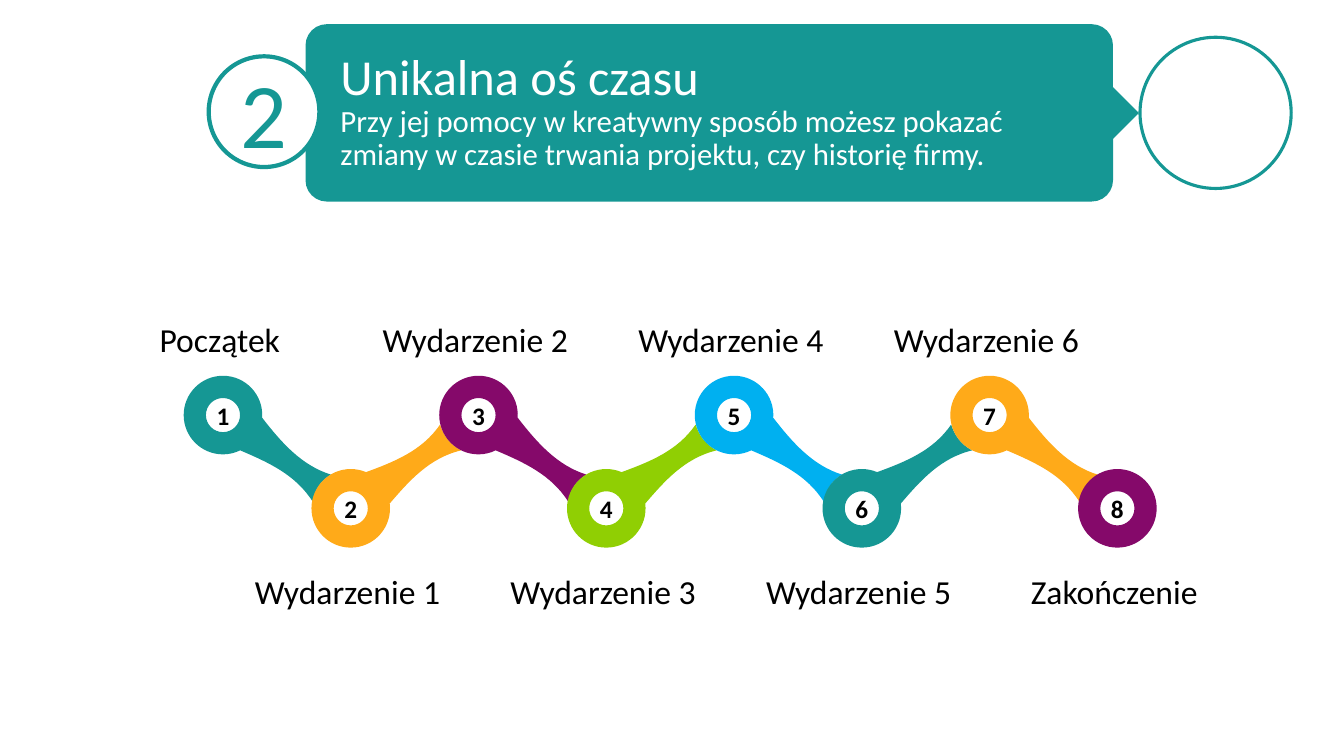
from dataclasses import dataclass
from math import cos, radians, sin, tan

from lxml.etree import SubElement
from pptx import Presentation
from pptx.dml.color import RGBColor
from pptx.enum.shapes import MSO_SHAPE
from pptx.enum.text import MSO_ANCHOR, PP_ALIGN
from pptx.oxml.ns import qn
from pptx.util import Cm, Pt


@dataclass(frozen=True)
class Theme:
    font: str = "Calibri"
    teal: str = "159794"
    orange: str = "FFAA19"
    purple: str = "85096A"
    green: str = "90CF03"
    blue: str = "00B0F0"
    white: str = "FFFFFF"
    black: str = "000000"
    badge_size: int = 66
    title_size: int = 36
    lead_size: int = 22
    label_size: int = 24
    number_size: int = 18


THEME = Theme()

# Timeline geometry in centimetres
FIRST_X, STEP = 5.62, 3.22
UPPER_Y, LOWER_Y = 10.46, 12.81
RING, HOLE = 0.99, 0.43
LABEL_WIDTH, LABEL_HEIGHT = 6.22, 1.27
UPPER_LABEL_Y, LOWER_LABEL_Y = 7.9, 14.25

# Arms: stops of the ring's arc in degrees, then Bezier curves around its centre
FULL_CIRCLE = (0, -90, -180, -270, -360)
DOWN_ARM = ((4, -90, -180, -270, -296), [
    [(1.14, 1.19), (1.83, 1.5), (2.26, 2.18)],
    [(2.31, 1.9), (2.46, 1.65), (2.72, 1.5)],
    [(1.98, 1.27), (1.47, 0.69), (0.99, 0.07)],
])
UP_ARM = ((-67, -90, -180, -270, -367), [
    [(1.47, -0.69), (1.98, -1.27), (2.78, -1.46)],
    [(2.51, -1.6), (2.34, -1.83), (2.25, -2.11)],
    [(1.8, -1.45), (1.09, -1.17), (0.38, -0.91)],
])
NO_ARM = (FULL_CIRCLE, [])


def arc(radius, stops):
    """Return the start point and one Bezier curve for each pair of stops."""
    angles = [radians(stop) for stop in stops]
    points = [(radius * cos(a), radius * sin(a)) for a in angles]
    curves = []
    for i, (start, end) in enumerate(zip(angles, angles[1:])):
        pull = 4 / 3 * tan((end - start) / 4)
        (x0, y0), (x1, y1) = points[i:i + 2]
        curves.append([(x0 - pull * y0, y0 + pull * x0),
                       (x1 + pull * y1, y1 - pull * x1), (x1, y1)])
    return points[0], curves


class SlideBuilder:
    def __init__(self, slide, theme):
        self.slide = slide
        self.theme = theme

    def paint(self, shape, fill, line=None, line_width=0):
        shape.shadow.inherit = False
        shape.fill.solid()
        shape.fill.fore_color.rgb = RGBColor.from_string(fill)
        if line:
            shape.line.color.rgb = RGBColor.from_string(line)
            shape.line.width = Pt(line_width)
        else:
            shape.line.fill.background()

    def shape(self, kind, left, top, width, height, fill, line=None, line_width=0):
        shape = self.slide.shapes.add_shape(
            kind, Cm(left), Cm(top), Cm(width), Cm(height))
        self.paint(shape, fill, line, line_width)
        return shape

    def run(self, paragraph, text, size, color, bold=False):
        run = paragraph.add_run()
        run.text = text
        run.font.name = self.theme.font
        run.font.size = Pt(size)
        run.font.bold = bold
        run.font.color.rgb = RGBColor.from_string(color)

    def text_box(self, left, top, width, height, align=PP_ALIGN.CENTER, inset=None):
        box = self.slide.shapes.add_textbox(Cm(left), Cm(top), Cm(width), Cm(height))
        frame = box.text_frame
        frame.word_wrap = True
        frame.vertical_anchor = MSO_ANCHOR.MIDDLE
        if inset is not None:
            frame.margin_left = frame.margin_right = Cm(inset)
            frame.margin_top = frame.margin_bottom = Cm(inset)
        paragraph = frame.paragraphs[0]
        paragraph.alignment = align
        return paragraph

    def node(self, x, y, arm, color):
        def place(point):
            return Cm(x + point[0]), Cm(y + point[1])

        stops, arm_curves = arm
        ring_start, ring_curves = arc(RING, stops)
        hole_start, hole_curves = arc(HOLE, FULL_CIRCLE)
        outline = ring_curves + arm_curves
        builder = self.slide.shapes.build_freeform(*place(ring_start))
        builder.add_line_segments([place(curve[-1]) for curve in outline], close=True)
        builder.move_to(*place(hole_start))
        builder.add_line_segments([place(curve[-1]) for curve in hole_curves], close=True)
        shape = builder.convert_to_shape()
        self.paint(shape, color)
        # Turn each straight segment into its Bezier curve
        segments = list(shape._element.iter(qn("a:lnTo")))
        for segment, curve in zip(segments, outline + hole_curves):
            segment.tag = qn("a:cubicBezTo")
            for old_point in list(segment):
                segment.remove(old_point)
            for px, py in map(place, curve):
                SubElement(segment, qn("a:pt"),
                           x=str(px - shape.left), y=str(py - shape.top))

    def number(self, x, y, text):
        paragraph = self.text_box(x - 0.4, y - 0.5, 0.8, 1, inset=0)
        self.run(paragraph, text, self.theme.number_size, self.theme.black, bold=True)

    def label(self, x, top, text):
        paragraph = self.text_box(x - LABEL_WIDTH / 2 - 0.08, top,
                                  LABEL_WIDTH, LABEL_HEIGHT)
        self.run(paragraph, text, self.theme.label_size, self.theme.black)


def main():
    presentation = Presentation()
    presentation.slide_width, presentation.slide_height = Cm(33.87), Cm(19.05)
    slide = presentation.slides.add_slide(presentation.slide_layouts[6])
    page = SlideBuilder(slide, THEME)

    # Header banner with its pointer and empty circle
    banner = page.shape(MSO_SHAPE.ROUNDED_RECTANGLE, 7.7, 0.61, 20.35, 4.47, THEME.teal)
    banner.adjustments[0] = 0.12
    pointer = page.shape(MSO_SHAPE.RIGHT_TRIANGLE, 27.53, 2.36, 0.97, 0.97, THEME.teal)
    pointer.rotation = 225
    page.shape(MSO_SHAPE.OVAL, 28.73, 0.94, 3.81, 3.81, THEME.white, THEME.teal, 2.25)

    # Title and lead
    title = page.text_box(8.33, 0.64, 19.41, 4.37, PP_ALIGN.LEFT)
    title.line_spacing = 0.9
    page.run(title, "Unikalna oś czasu", THEME.title_size, THEME.white)
    title.add_line_break()
    page.run(title, "Przy jej pomocy w kreatywny sposób możesz pokazać zmiany "
                    "w czasie trwania projektu, czy historię firmy.",
             THEME.lead_size, THEME.white)

    # Section number
    badge = page.shape(MSO_SHAPE.OVAL, 5.26, 1.42, 2.79, 2.79,
                       THEME.white, THEME.teal, 3)
    badge.text_frame.vertical_anchor = MSO_ANCHOR.MIDDLE
    section = badge.text_frame.paragraphs[0]
    section.alignment = PP_ALIGN.CENTER
    page.run(section, "2", THEME.badge_size, THEME.teal)

    # Timeline: nodes alternate between the upper and the lower row
    events = [
        ("Początek", THEME.teal), ("Wydarzenie 1", THEME.orange),
        ("Wydarzenie 2", THEME.purple), ("Wydarzenie 3", THEME.green),
        ("Wydarzenie 4", THEME.blue), ("Wydarzenie 5", THEME.teal),
        ("Wydarzenie 6", THEME.orange), ("Zakończenie", THEME.purple),
    ]
    rows = [(UPPER_Y, UPPER_LABEL_Y, DOWN_ARM), (LOWER_Y, LOWER_LABEL_Y, UP_ARM)]
    for index, (event, color) in enumerate(events):
        x = FIRST_X + index * STEP
        y, label_y, arm = rows[index % 2]
        is_last = index == len(events) - 1
        page.node(x, y, NO_ARM if is_last else arm, color)
        page.number(x, y, str(index + 1))
        page.label(x, label_y, event)

    presentation.save("out.pptx")


if __name__ == "__main__":
    main()
